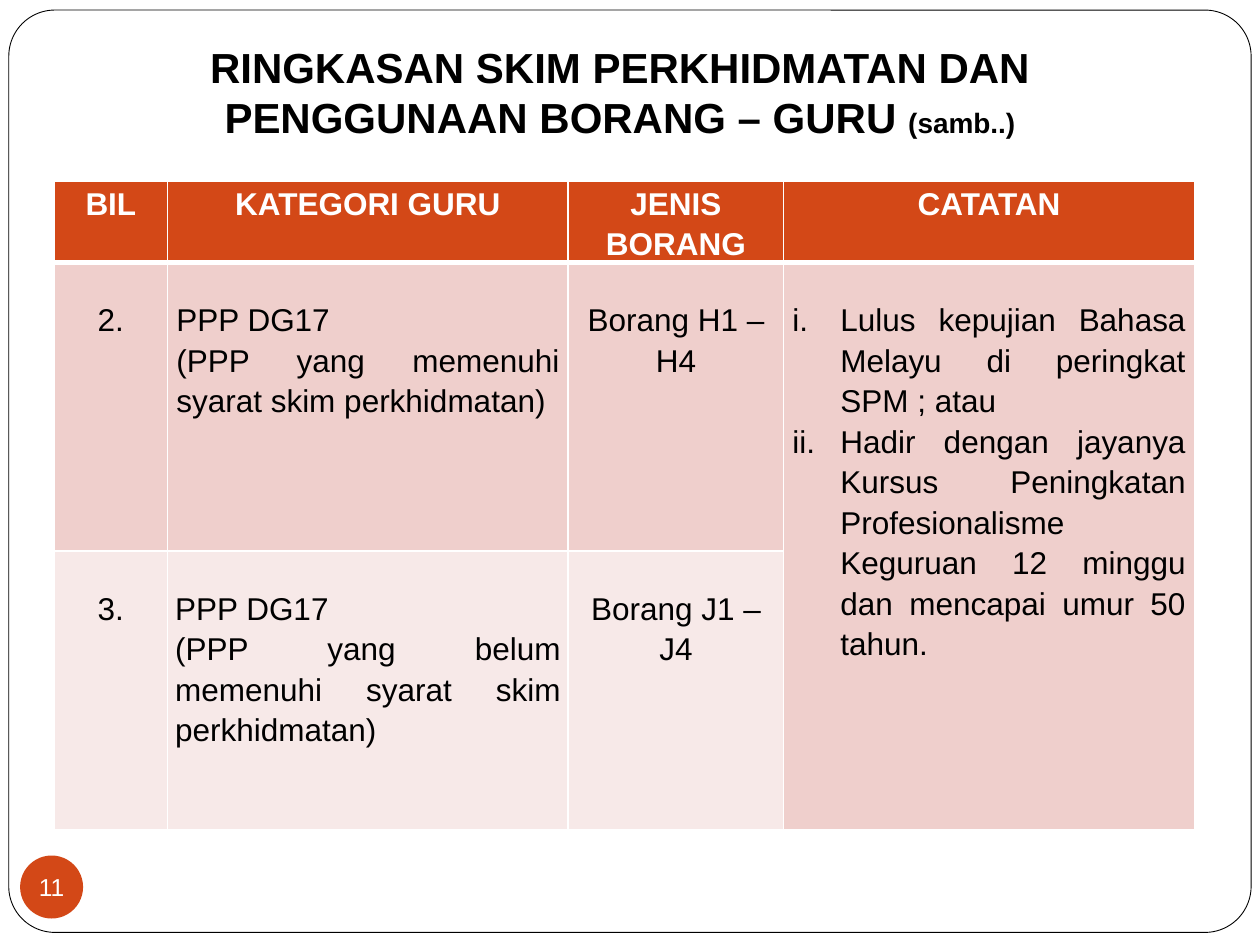
from dataclasses import dataclass
from typing import Any

from lxml.etree import SubElement
from pptx import Presentation
from pptx.dml.color import RGBColor
from pptx.enum.shapes import MSO_SHAPE as Shape
from pptx.enum.text import MSO_ANCHOR as Anchor, MSO_AUTO_SIZE as AutoSize, PP_ALIGN as Align
from pptx.oxml.ns import qn
from pptx.util import Inches, Pt

BLACK = RGBColor(0x00, 0x00, 0x00)
WHITE = RGBColor(0xFF, 0xFF, 0xFF)
ORANGE = RGBColor(0xD3, 0x48, 0x17)
ROSE = RGBColor(0xEF, 0xCF, 0xCC)
PALE = RGBColor(0xF7, 0xE9, 0xE8)

COLUMNS = [0.9, 3.18, 1.71, 3.26]
ROWS = [0.64, 2.29, 2.21]


@dataclass
class Entry:
    lines: list[str]
    align: Align = Align.CENTER
    numbered: bool = False


@dataclass
class Band:
    entries: list[Entry]
    fill: RGBColor
    color: RGBColor = BLACK
    bold: bool = False
    side: float = 0.07
    top: float = 0.28
    rule_above: float = 1
    rule_below: float = 1


BANDS = [
    Band([Entry(["BIL"]), Entry(["KATEGORI GURU"]), Entry(["JENIS BORANG"]), Entry(["CATATAN"])],
         ORANGE, color=WHITE, bold=True, side=0.06, top=0, rule_below=3),
    Band([Entry(["2."]),
          Entry(["PPP DG17", "(PPP yang memenuhi syarat skim perkhidmatan)"], Align.JUSTIFY),
          Entry(["Borang H1 – H4"]),
          Entry(["Lulus kepujian Bahasa Melayu di peringkat SPM ; atau",
                 "Hadir dengan jayanya Kursus Peningkatan Profesionalisme Keguruan "
                 "12 minggu dan mencapai umur 50 tahun."], Align.JUSTIFY, numbered=True)],
         ROSE, rule_above=3),
    Band([Entry(["3."]),
          Entry(["PPP DG17", "(PPP yang belum memenuhi syarat skim perkhidmatan)"], Align.JUSTIFY),
          Entry(["Borang J1 – J4"])],
         PALE, side=0.06),
]


def apply(target: Any, values: dict[str, Any]) -> None:
    for name, value in values.items():
        setattr(target, name, value)


def add_run(p: Any, text: str, size: float, color: RGBColor, bold: bool = False) -> None:
    r = p.add_run()
    r.text = text
    apply(r.font, {"name": "Arial", "size": Pt(size), "bold": bold})
    r.font.color.rgb = color


def add_shape(s: Any, kind: Shape, box: list[float], fill: RGBColor) -> Any:
    sp = s.shapes.add_shape(kind, *map(Inches, box))
    sp.shadow.inherit = False
    sp.fill.solid()
    sp.fill.fore_color.rgb = fill
    return sp


def number_paragraph(p: Any) -> None:
    pPr = p._p.get_or_add_pPr()
    pPr.set("marL", str(Inches(0.38)))
    pPr.set("indent", str(-Inches(0.38)))
    SubElement(pPr, qn("a:buAutoNum"), type="romanLcPeriod")


def set_borders(cell: Any, band: Band) -> None:
    tcPr = cell._tc.get_or_add_tcPr()
    widths = {"lnL": 1, "lnR": 1, "lnT": band.rule_above, "lnB": band.rule_below}
    for i, (side, width) in enumerate(widths.items()):
        ln = SubElement(tcPr, qn(f"a:{side}"), w=str(Pt(width)))
        SubElement(SubElement(ln, qn("a:solidFill")), qn("a:srgbClr"), val=str(WHITE))
        tcPr.insert(i, ln)


def fill_cell(cell: Any, entry: Entry, band: Band) -> None:
    apply(cell, {"margin_left": Inches(band.side), "margin_right": Inches(band.side),
                 "margin_top": Inches(band.top), "margin_bottom": 0,
                 "vertical_anchor": Anchor.TOP})
    cell.fill.solid()
    cell.fill.fore_color.rgb = band.fill
    set_borders(cell, band)
    tf = cell.text_frame
    for i, line in enumerate(entry.lines):
        p = tf.add_paragraph() if i else tf.paragraphs[0]
        apply(p, {"alignment": entry.align, "line_spacing": 1.15})
        if entry.numbered:
            number_paragraph(p)
        add_run(p, line, 18, band.color, band.bold)


def add_frame(s: Any) -> None:
    sp = add_shape(s, Shape.ROUNDED_RECTANGLE, [0.07, 0.08, 9.86, 7.32], WHITE)
    sp.adjustments[0] = 0.05
    sp.line.color.rgb = BLACK
    sp.line.width = Pt(0.5)
    s.shapes._spTree.insert(2, sp._element)


def add_title(s: Any) -> None:
    title = s.shapes.title
    apply(title, {"left": Inches(0.67), "top": Inches(0.44),
                  "width": Inches(8.5), "height": Inches(0.79)})
    tf = title.text_frame
    apply(tf, {"auto_size": AutoSize.NONE, "word_wrap": True, "vertical_anchor": Anchor.BOTTOM,
               "margin_left": Inches(0.1), "margin_right": Inches(0.1),
               "margin_top": Inches(0.05), "margin_bottom": Inches(0.1)})
    p = tf.paragraphs[0]
    p.alignment = Align.CENTER
    add_run(p, "RINGKASAN SKIM PERKHIDMATAN DAN PENGGUNAAN BORANG – GURU ", 24, BLACK, True)
    add_run(p, "(samb..)", 16, BLACK, True)


def add_scheme_table(s: Any) -> None:
    table = s.shapes.add_table(len(ROWS), len(COLUMNS), Inches(0.43), Inches(1.44),
                               Inches(sum(COLUMNS)), Inches(sum(ROWS))).table
    table.horz_banding = False
    for column, width in zip(table.columns, COLUMNS):
        column.width = Inches(width)
    for row, height in zip(table.rows, ROWS):
        row.height = Inches(height)
    table.cell(1, 3).merge(table.cell(2, 3))
    for i, band in enumerate(BANDS):
        for j, entry in enumerate(band.entries):
            fill_cell(table.cell(i, j), entry, band)


def add_page_number(s: Any) -> None:
    sp = add_shape(s, Shape.OVAL, [0.16, 6.79, 0.5, 0.5], ORANGE)
    sp.line.fill.background()
    tf = sp.text_frame
    apply(tf, {"word_wrap": False, "vertical_anchor": Anchor.MIDDLE, "margin_left": 0,
               "margin_right": 0, "margin_top": 0, "margin_bottom": 0})
    p = tf.paragraphs[0]
    p.alignment = Align.CENTER
    add_run(p, "11", 14, WHITE)


def main() -> None:
    prs = Presentation()
    apply(prs, {"slide_width": Inches(10), "slide_height": Inches(7.5)})
    s = prs.slides.add_slide(prs.slide_layouts[5])
    add_frame(s)
    add_title(s)
    add_scheme_table(s)
    add_page_number(s)
    prs.save("out.pptx")


if __name__ == "__main__":
    main()
